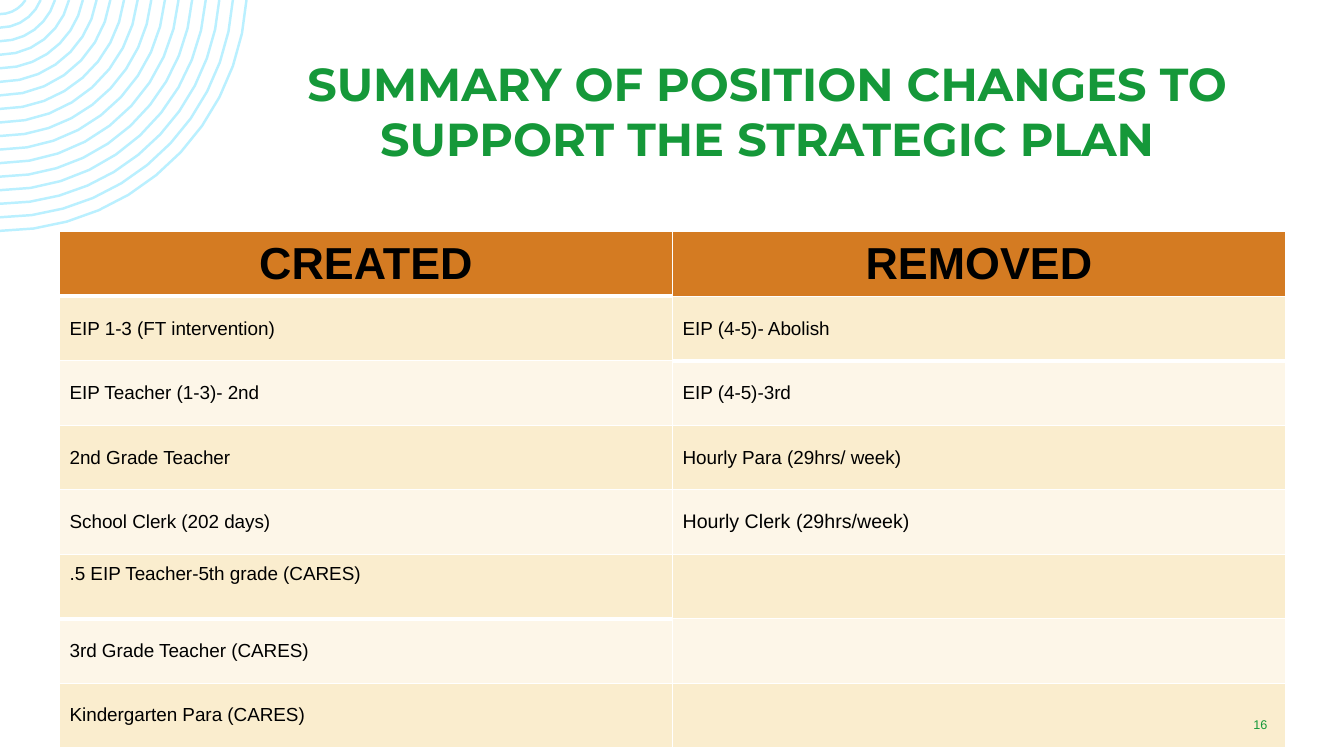
from math import asin, cos, pi, sin

from lxml.etree import SubElement
from pptx import Presentation
from pptx.dml.color import RGBColor
from pptx.enum.text import MSO_ANCHOR, PP_ALIGN
from pptx.oxml.ns import qn
from pptx.util import Inches, Pt

# Content
TITLE = "SUMMARY OF POSITION CHANGES TO SUPPORT THE STRATEGIC PLAN"
PAGE_NUMBER = "16"
POSITIONS = [
    ("CREATED", "REMOVED"),
    ("EIP 1-3 (FT intervention)", "EIP (4-5)- Abolish"),
    ("EIP Teacher (1-3)- 2nd", "EIP (4-5)-3rd"),
    ("2nd Grade Teacher", "Hourly Para (29hrs/ week)"),
    ("School Clerk (202 days)", "Hourly Clerk (29hrs/week)"),
    (".5 EIP Teacher-5th grade (CARES)", ""),
    ("3rd Grade Teacher (CARES)", ""),
    ("Kindergarten Para (CARES)", ""),
]
# Cells (row, column) that depart from the common look
HEAVY_BELOW = {(0, 0), (1, 1), (5, 0)}
LARGER_TEXT = {(4, 1)}
TOP_ALIGNED = {(5, 0)}

THEME = {
    "green": "159839", "rings": "BAF0FF", "header": "D47B22",
    "bands": ("FDF6E8", "FAEDCE"), "text": "000000", "border": "FFFFFF",
    "title_font": "Montserrat", "body_font": "Arial",
    "title_size": 33, "header_size": 32, "body_size": 13.5,
    "larger_size": 14, "number_size": 9,
    "thin": 1, "heavy": 3, "ring_line": 1.75,
}

# Layout in inches
ROW_HEIGHT, COLUMN_WIDTH = 0.64, 6.08
RING_COUNT, RING_OUTER, RING_INNER = 17, 2.45, 0.3
RING_CENTRE_Y = -0.16


def style(paragraph, font, size, color, bold=False, align=PP_ALIGN.LEFT):
    paragraph.alignment = align
    paragraph.font.name = font
    paragraph.font.size = Pt(size)
    paragraph.font.bold = bold
    paragraph.font.color.rgb = RGBColor.from_string(color)


def add_text(slide, box, text, anchor, *look):
    frame = slide.shapes.add_textbox(*map(Inches, box)).text_frame
    frame.word_wrap = True
    frame.vertical_anchor = anchor
    frame.text = text
    style(frame.paragraphs[0], *look)


def arc(radius):
    """Points from the top edge of the slide round to its left edge."""
    steps = 4 + round(3 * radius)
    start = asin(-RING_CENTRE_Y / radius)
    angles = [start + (pi / 2 - start) * i / steps for i in range(steps + 1)]
    return [(Inches(radius * cos(a)), Inches(RING_CENTRE_Y + radius * sin(a)))
            for a in angles]


def add_rings(slide):
    step = (RING_OUTER - RING_INNER) / (RING_COUNT - 1)
    first, *others = [arc(RING_OUTER - ring * step) for ring in range(RING_COUNT)]
    builder = slide.shapes.build_freeform(*first[0])
    builder.add_line_segments(first[1:], close=False)
    for points in others:
        builder.move_to(*points[0])
        builder.add_line_segments(points[1:], close=False)
    rings = builder.convert_to_shape()
    rings.shadow.inherit = False
    rings.fill.background()
    rings.line.color.rgb = RGBColor.from_string(THEME["rings"])
    rings.line.width = Pt(THEME["ring_line"])


def set_borders(cell, row, column):
    widths = dict.fromkeys(("lnL", "lnR", "lnT", "lnB"), THEME["thin"])
    if (row - 1, column) in HEAVY_BELOW:
        widths["lnT"] = THEME["heavy"]
    if (row, column) in HEAVY_BELOW:
        widths["lnB"] = THEME["heavy"]
    properties = cell._tc.get_or_add_tcPr()
    for edge, width in widths.items():
        line = SubElement(properties, qn(f"a:{edge}"), w=str(Pt(width)))
        fill = SubElement(line, qn("a:solidFill"))
        SubElement(fill, qn("a:srgbClr"), val=THEME["border"])


def fill_cell(cell, row, column, text):
    header = row == 0
    # Borders come before the fill in the cell properties
    set_borders(cell, row, column)
    cell.fill.solid()
    color = THEME["header"] if header else THEME["bands"][row % 2]
    cell.fill.fore_color.rgb = RGBColor.from_string(color)
    cell.vertical_anchor = MSO_ANCHOR.MIDDLE
    if (row, column) in TOP_ALIGNED:
        cell.vertical_anchor = MSO_ANCHOR.TOP
        cell.margin_top = Inches(0.09)
    cell.text = text
    size = THEME["header_size"] if header else THEME["body_size"]
    if (row, column) in LARGER_TEXT:
        size = THEME["larger_size"]
    style(cell.text_frame.paragraphs[0], THEME["body_font"], size, THEME["text"],
          header, PP_ALIGN.CENTER if header else PP_ALIGN.LEFT)


def add_positions(slide):
    rows, columns = len(POSITIONS), len(POSITIONS[0])
    positions = slide.shapes.add_table(
        rows, columns, Inches(0.59), Inches(2.3),
        Inches(columns * COLUMN_WIDTH), Inches(rows * ROW_HEIGHT)).table
    for row, texts in enumerate(POSITIONS):
        for column, text in enumerate(texts):
            fill_cell(positions.cell(row, column), row, column, text)


def main():
    deck = Presentation()
    deck.slide_width, deck.slide_height = Inches(13.33), Inches(7.5)
    slide = deck.slides.add_slide(deck.slide_layouts[6])

    # Corner decoration, title, table, page number
    add_rings(slide)
    add_text(slide, (2.46, 0.5, 10.3, 1.47), TITLE, MSO_ANCHOR.TOP,
             THEME["title_font"], THEME["title_size"], THEME["green"],
             True, PP_ALIGN.CENTER)
    add_positions(slide)
    add_text(slide, (11.96, 7.04, 1.08, 0.3), PAGE_NUMBER, MSO_ANCHOR.MIDDLE,
             THEME["body_font"], THEME["number_size"], THEME["green"],
             False, PP_ALIGN.CENTER)

    deck.save("out.pptx")


if __name__ == "__main__":
    main()
